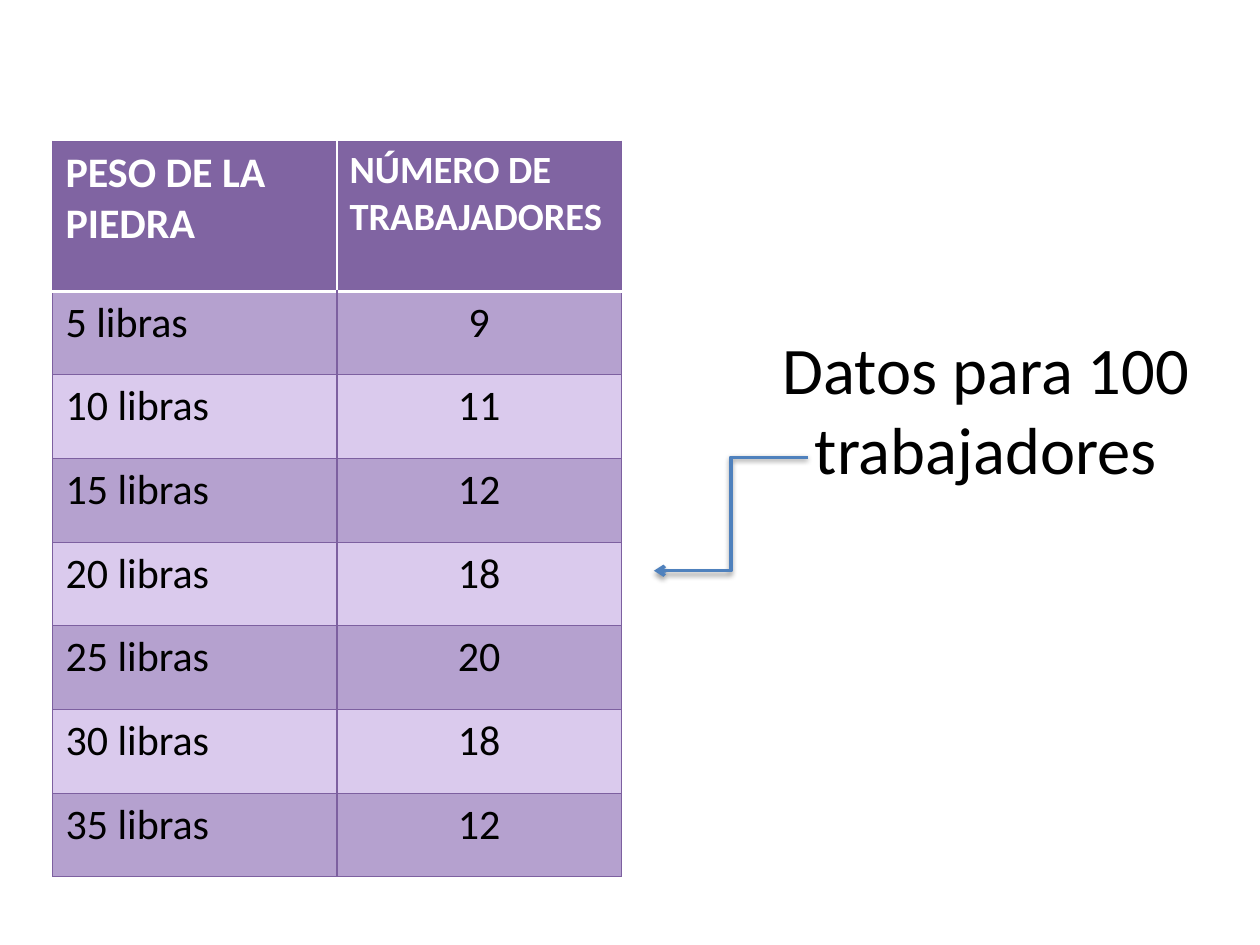
from dataclasses import dataclass

from lxml import etree
from pptx import Presentation
from pptx.dml.color import RGBColor
from pptx.enum.shapes import MSO_CONNECTOR
from pptx.enum.text import MSO_ANCHOR, PP_ALIGN
from pptx.oxml import parse_xml
from pptx.oxml.ns import qn
from pptx.util import Inches, Pt

ELBOW = MSO_CONNECTOR.ELBOW
MIDDLE = MSO_ANCHOR.MIDDLE
LEFT, CENTER = PP_ALIGN.LEFT, PP_ALIGN.CENTER
TITLE_ONLY = 5
NS = 'xmlns:a="http://schemas.openxmlformats.org/drawingml/2006/main"'


@dataclass(frozen=True)
class Theme:
    font: str = "Calibri"
    text: str = "000000"
    white: str = "FFFFFF"
    header: str = "8064A2"
    dark_band: str = "B5A1CF"
    light_band: str = "DACAED"
    border: str = "7D60A0"
    arrow: str = "4F81BD"
    title_size: int = 38
    body_size: int = 24
    small_size: int = 22
    thin: float = 0.75
    thick: float = 2


THEME = Theme()
HEADERS = [("PESO DE LA PIEDRA", THEME.body_size),
           ("NÚMERO DE TRABAJADORES", THEME.small_size)]
WORKERS = [9, 11, 12, 18, 20, 18, 12]
WEIGHT_STEP = 5


def set_font(p, size, color, bold=False):
    p.font.name = THEME.font
    p.font.size = Pt(size)
    p.font.bold = bold
    p.font.color.rgb = RGBColor.from_string(color)


def set_borders(cell, borders):
    """Borders are (side, colour, points) in the order L, R, T, B."""
    tc_pr = cell._tc.get_or_add_tcPr()
    for i, (side, color, width) in enumerate(borders):
        tc_pr.insert(i, parse_xml(
            f'<a:ln{side} {NS} w="{Pt(width)}"><a:solidFill>'
            f'<a:srgbClr val="{color}"/></a:solidFill></a:ln{side}>'))


def fill_cell(cell, text, size, color, fill, align=LEFT, bold=False):
    cell.text = text
    p = cell.text_frame.paragraphs[0]
    p.alignment = align
    set_font(p, size, color, bold)
    cell.fill.solid()
    cell.fill.fore_color.rgb = RGBColor.from_string(fill)


def add_weight_table(s, left, top, width, height, header_height):
    rows, cols = len(WORKERS) + 1, len(HEADERS)
    table = s.shapes.add_table(rows, cols, left, top, width, height).table
    for row in table.rows:
        row.height = (height - header_height) // len(WORKERS)
    table.rows[0].height = header_height

    # Header row: outer borders and a white rule below
    edge = (THEME.border, THEME.thin)
    rule = (THEME.white, THEME.thick)
    for col, (text, size) in enumerate(HEADERS):
        cell = table.cell(0, col)
        fill_cell(cell, text, size, THEME.white, THEME.header, bold=True)
        set_borders(cell, [("R" if col else "L", *edge), ("T", *edge), ("B", *rule)])

    # Banded data rows
    for row, count in enumerate(WORKERS, start=1):
        band = THEME.dark_band if row % 2 else THEME.light_band
        values = [(f"{row * WEIGHT_STEP} libras", LEFT), (str(count), CENTER)]
        for col, (text, align) in enumerate(values):
            cell = table.cell(row, col)
            fill_cell(cell, text, THEME.body_size, THEME.text, band, align)
            top_line = rule if row == 1 else edge
            set_borders(cell, [("L", *edge), ("R", *edge), ("T", *top_line), ("B", *edge)])


def add_title(s, text, left, top, width, height):
    sp = s.shapes.title
    sp.left, sp.top, sp.width, sp.height = left, top, width, height
    tf = sp.text_frame
    tf.text = text
    tf.word_wrap = True
    tf.vertical_anchor = MIDDLE
    p = tf.paragraphs[0]
    p.alignment = CENTER
    set_font(p, THEME.title_size, THEME.text)


def add_elbow_arrow(s, x1, y1, x2, y2):
    line = s.shapes.add_connector(ELBOW, x1, y1, x2, y2)
    line.line.color.rgb = RGBColor.from_string(THEME.arrow)
    line.line.width = Pt(THEME.thick)
    etree.SubElement(line.line._get_or_add_ln(), qn("a:tailEnd"), type="arrow")
    # Soft shadow straight below the line
    line._element.spPr.append(parse_xml(
        f'<a:effectLst {NS}><a:outerShdw blurRad="{Pt(3.1)}" dist="{Pt(1.6)}" '
        'dir="5400000" rotWithShape="0"><a:srgbClr val="000000">'
        '<a:alpha val="38000"/></a:srgbClr></a:outerShdw></a:effectLst>'))


def main():
    prs = Presentation()
    prs.slide_width, prs.slide_height = Inches(10), Inches(7.5)
    s = prs.slides.add_slide(prs.slide_layouts[TITLE_ONLY])
    add_weight_table(s, Inches(0.42), Inches(1.12), Inches(4.51), Inches(5.84),
                     header_height=Inches(1.19))
    add_title(s, "Datos para 100 trabajadores",
              Inches(5.8), Inches(2.72), Inches(4.05), Inches(1.03))
    add_elbow_arrow(s, Inches(6.41), Inches(3.63), Inches(5.19), Inches(4.53))
    prs.save("out.pptx")


if __name__ == "__main__":
    main()
